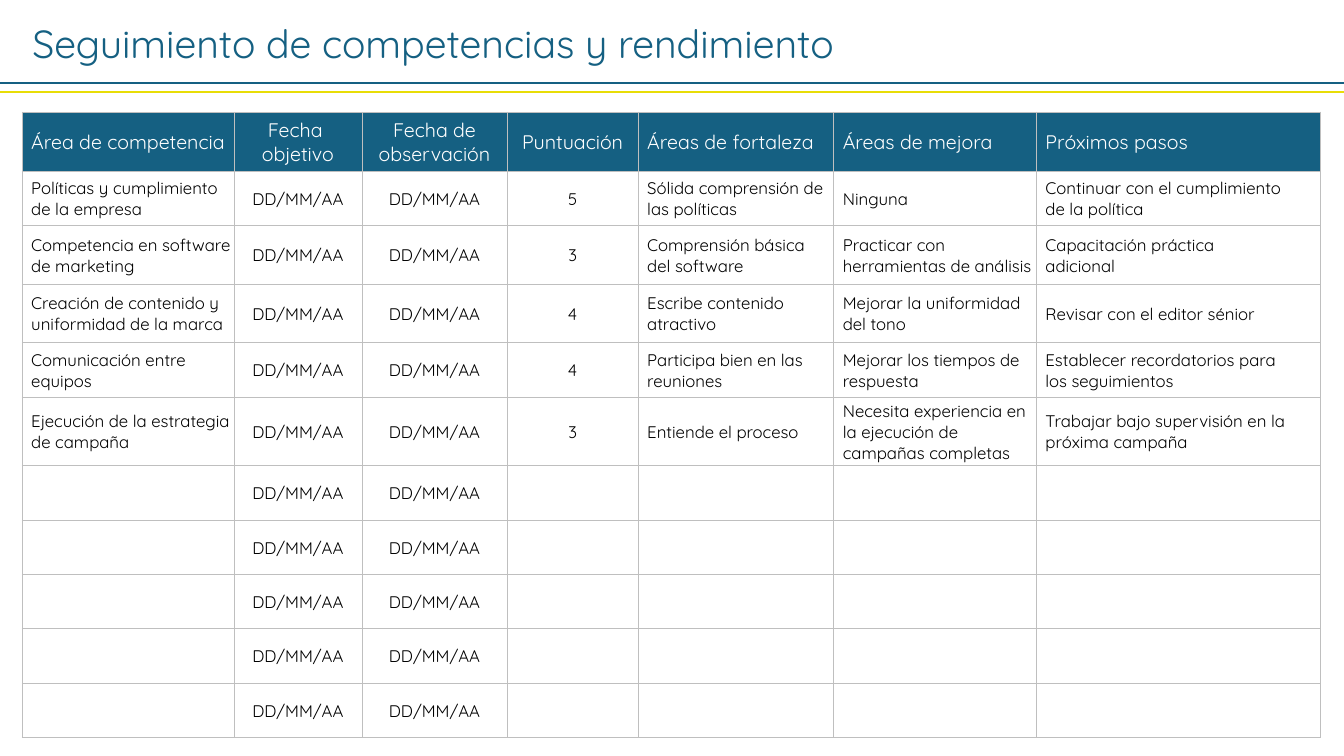
from lxml import etree
from pptx import Presentation
from pptx.dml.color import RGBColor
from pptx.enum.shapes import MSO_CONNECTOR as CONNECTOR
from pptx.enum.text import MSO_ANCHOR as ANCHOR, MSO_AUTO_SIZE as AUTO_SIZE, PP_ALIGN as ALIGN
from pptx.oxml import parse_xml
from pptx.oxml.ns import nsdecls, qn
from pptx.util import Inches, Pt

SLIDE_W, SLIDE_H = 13.33, 7.5
BLUE, YELLOW, GRID = "156082", "E8DD06", "BFBFBF"
WHITE, BLACK = "FFFFFF", "000000"

# Table content
DATE = "DD/MM/AA"
HEADERS = ["Área de competencia", "Fecha \vobjetivo", "Fecha de observación", "Puntuación",
           "Áreas de fortaleza", "Áreas de mejora", "Próximos pasos"]
REVIEWS = [
    ("Políticas y cumplimiento de la empresa", "5", "Sólida comprensión de las políticas",
     "Ninguna", "Continuar con el cumplimiento \vde la política"),
    ("Competencia en software de marketing", "3", "Comprensión básica del software",
     "Practicar con herramientas de análisis", "Capacitación práctica \vadicional"),
    ("Creación de contenido y uniformidad de la marca", "4", "Escribe contenido atractivo",
     "Mejorar la uniformidad del tono", "Revisar con el editor sénior"),
    ("Comunicación entre equipos", "4", "Participa bien en las reuniones",
     "Mejorar los tiempos de respuesta", "Establecer recordatorios para \vlos seguimientos"),
    ("Ejecución de la estrategia de campaña", "3", "Entiende el proceso",
     "Necesita experiencia en la ejecución de campañas completas",
     "Trabajar bajo supervisión en la próxima campaña"),
] + [("",) * 5] * 5
ROWS = [HEADERS] + [[area, DATE, DATE, *rest] for area, *rest in REVIEWS]
COL_WIDTHS = [2.1, 1.27, 1.44, 1.3, 1.94, 2.01, 2.82]
ROW_HEIGHTS = [0.59, 0.54, 0.58, 0.58, 0.54, 0.68] + [0.54] * 5
CENTERED = (1, 2, 3)


def rgb(value):
    return RGBColor.from_string(value)


class Deck:
    """Holds the font and the current slide."""

    def __init__(self, font):
        self.font = font
        self.prs = Presentation()
        self.prs.slide_width, self.prs.slide_height = Inches(SLIDE_W), Inches(SLIDE_H)
        self.s = self.prs.slides.add_slide(self.prs.slide_layouts[5])

    def set_text(self, tf, text, size, color, align):
        tf.text = text
        for p in tf.paragraphs:
            p.alignment = align
            for r in p.runs:
                r.font.name, r.font.size = self.font, Pt(size)
                r.font.color.rgb = rgb(color)

    def title(self, text, x, y, w, h):
        sp = self.s.shapes.title
        sp.left, sp.top, sp.width, sp.height = (Inches(v) for v in (x, y, w, h))
        tf = sp.text_frame
        tf.word_wrap, tf.auto_size = True, AUTO_SIZE.NONE
        tf.vertical_anchor = ANCHOR.TOP
        self.set_text(tf, text, 28, BLUE, ALIGN.LEFT)

    def rule(self, y, color):
        line = self.s.shapes.add_connector(CONNECTOR.STRAIGHT, 0, Inches(y),
                                           Inches(SLIDE_W), Inches(y))
        line.line.color.rgb, line.line.width = rgb(color), Pt(1.5)
        etree.SubElement(line._element.spPr, qn("a:effectLst"))

    def borders(self, cell):
        tcPr = cell._tc.get_or_add_tcPr()
        for i, side in enumerate("LRTB"):
            tcPr.insert(i, parse_xml(
                f'<a:ln{side} {nsdecls("a")} w="{Pt(0.5)}"><a:solidFill>'
                f'<a:srgbClr val="{GRID}"/></a:solidFill></a:ln{side}>'))

    def cell(self, cell, text, header, centered):
        cell.fill.solid()
        cell.fill.fore_color.rgb = rgb(BLUE if header else WHITE)
        self.borders(cell)
        cell.vertical_anchor = ANCHOR.MIDDLE
        cell.margin_left = Inches(0.01 if centered else 0.09)
        cell.margin_right = cell.margin_top = Inches(0.01)
        cell.margin_bottom = 0
        if text:
            self.set_text(cell.text_frame, text, 14 if header else 12,
                          WHITE if header else BLACK, ALIGN.CENTER if centered else ALIGN.LEFT)

    def table(self, rows, x, y, widths, heights):
        frame = self.s.shapes.add_table(len(rows), len(widths), Inches(x), Inches(y),
                                        Inches(sum(widths)), Inches(sum(heights)))
        table = frame.table
        # Without the header style, the headings are not bold
        table.first_row = table.horz_banding = False
        for col, width in zip(table.columns, widths):
            col.width = Inches(width)
        for i, (row, height) in enumerate(zip(table.rows, heights)):
            row.height = Inches(height)
            for j, cell in enumerate(row.cells):
                self.cell(cell, rows[i][j], i == 0, j in CENTERED)


def main():
    deck = Deck("Quicksand")

    # Heading and its double rule
    deck.title("Seguimiento de competencias y rendimiento", 0.22, 0.14, 10.49, 0.57)
    deck.rule(0.82, BLUE)
    deck.rule(0.91, YELLOW)

    # Tracking table
    deck.table(ROWS, 0.22, 1.11, COL_WIDTHS, ROW_HEIGHTS)

    deck.prs.save("out.pptx")


if __name__ == "__main__":
    main()
